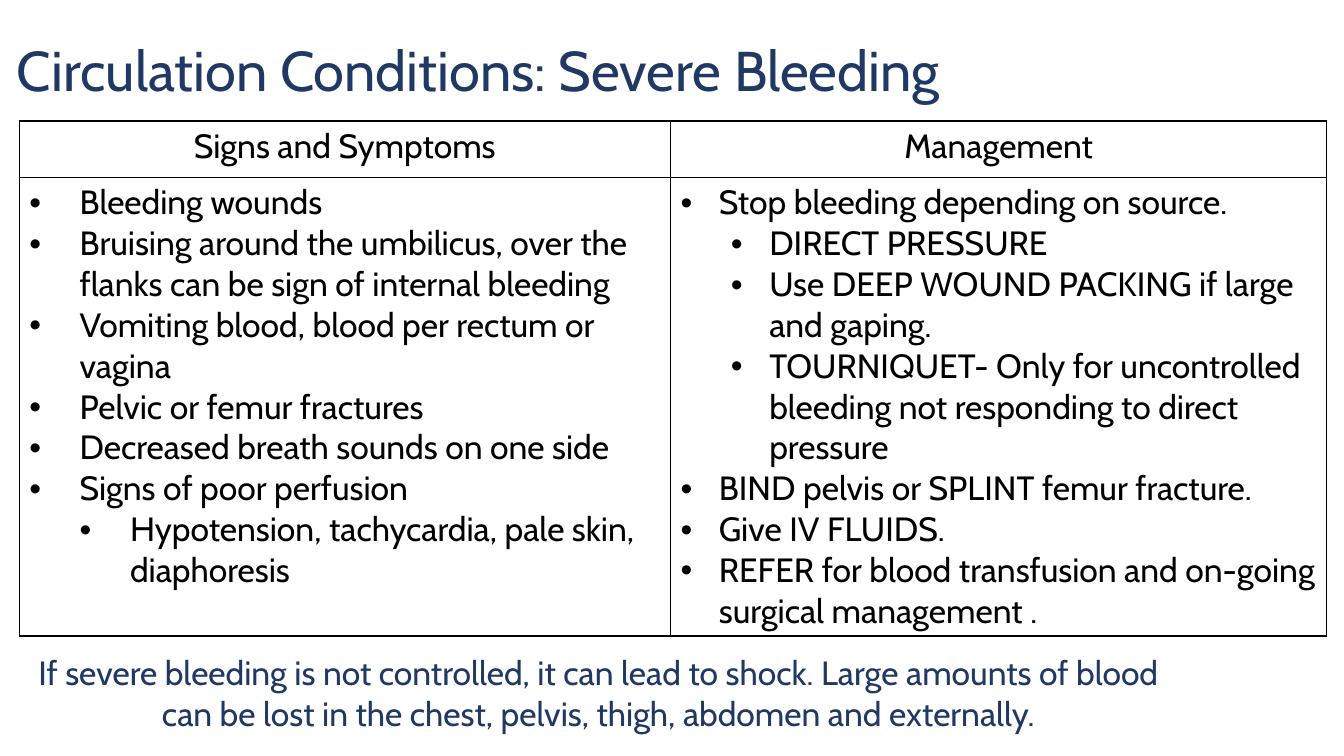
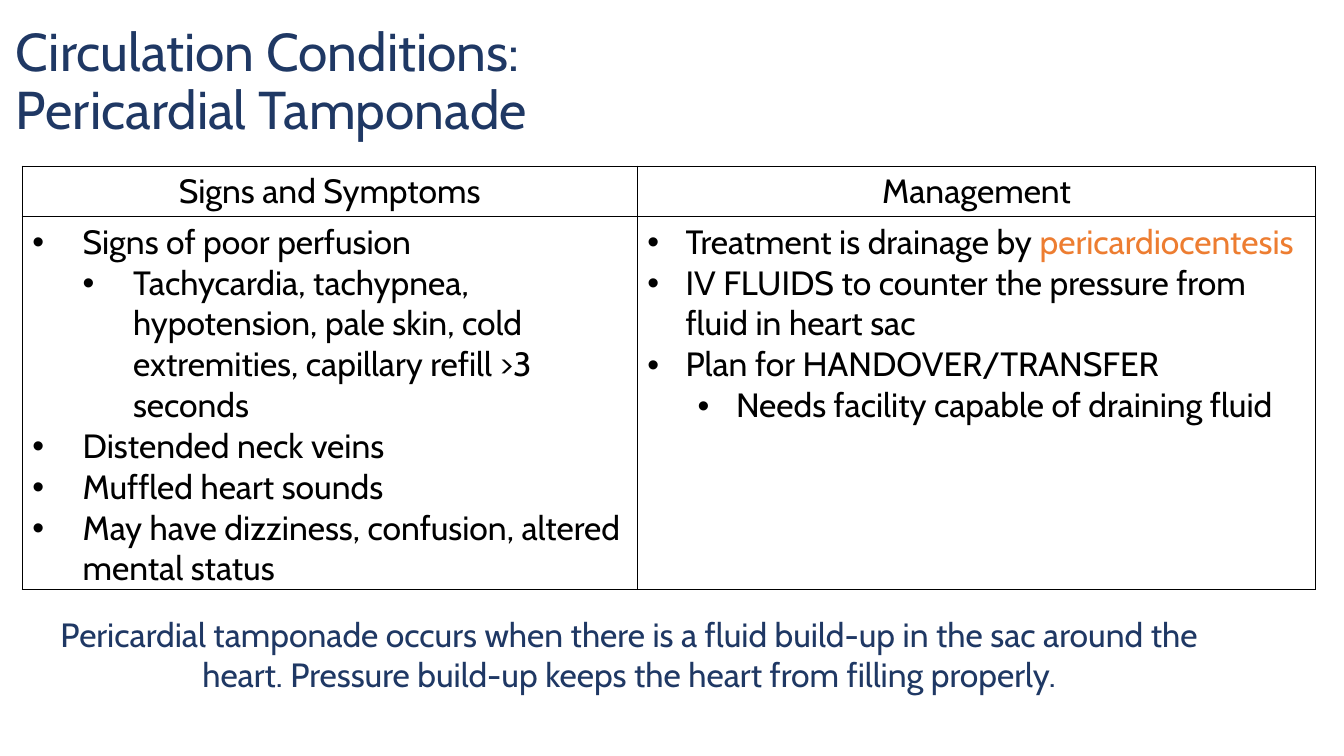
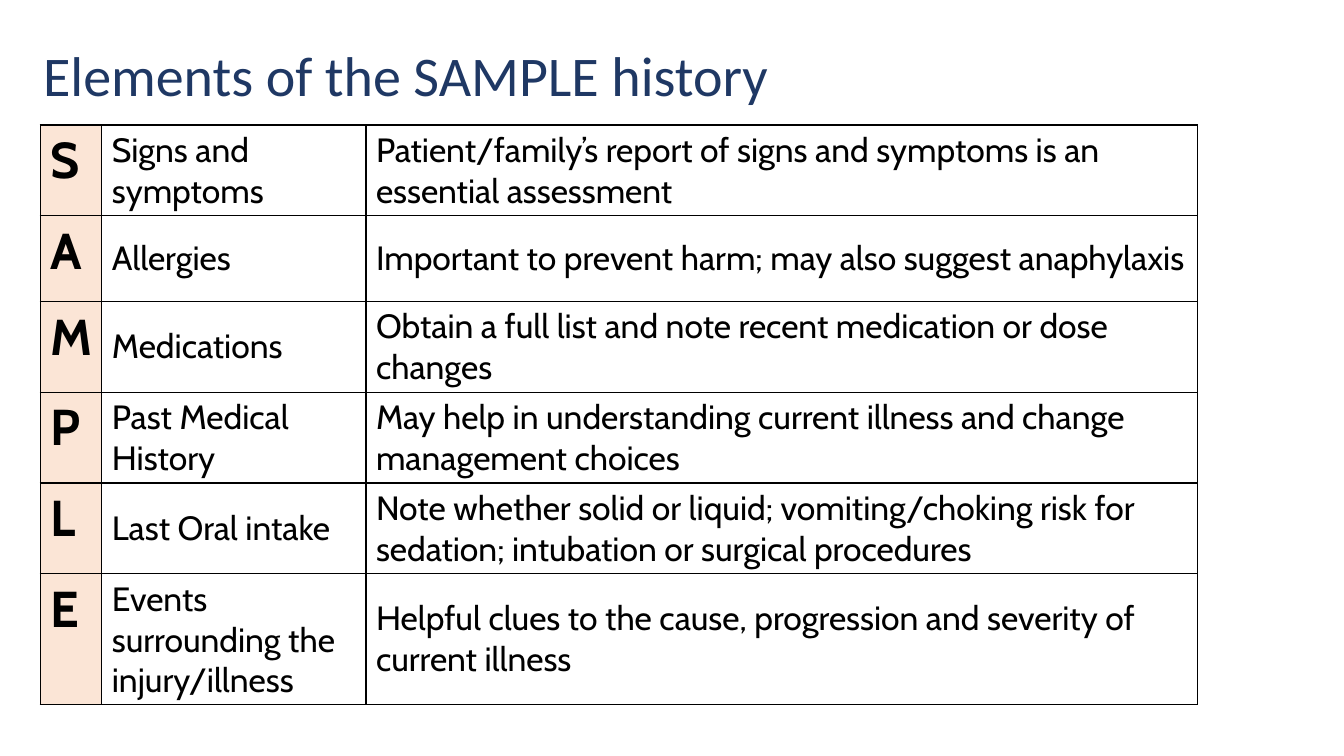
from lxml import etree
from pptx import Presentation
from pptx.dml.color import RGBColor
from pptx.enum.text import MSO_ANCHOR, PP_ALIGN
from pptx.oxml.ns import qn
from pptx.util import Inches, Pt

CENTER, LEFT = PP_ALIGN.CENTER, PP_ALIGN.LEFT
TOP, MIDDLE = MSO_ANCHOR.TOP, MSO_ANCHOR.MIDDLE
NAVY, BLACK, ORANGE, PEACH = "1F3864", "000000", "ED7D31", "FBE5D6"
FONT = "Cabin"
BODY_SIZE = 24
HEADINGS = ["Signs and Symptoms", "Management"]
HANGING = [0.5, 0.38]
SUB_INDENT = 0.5

BLEEDING = [
    [
        (0, "Bleeding wounds"),
        (0, "Bruising around the umbilicus, over the flanks can be sign of internal bleeding"),
        (0, "Vomiting blood, blood per rectum or vagina"),
        (0, "Pelvic or femur fractures"),
        (0, "Decreased breath sounds on one side"),
        (0, "Signs of poor perfusion"),
        (1, "Hypotension, tachycardia, pale skin, diaphoresis"),
    ],
    [
        (0, "Stop bleeding depending on source."),
        (1, "DIRECT PRESSURE"),
        (1, "Use DEEP WOUND PACKING if large and gaping."),
        (1, "TOURNIQUET- Only for uncontrolled bleeding not responding to direct pressure"),
        (0, "BIND pelvis or SPLINT femur fracture."),
        (0, "Give IV FLUIDS."),
        (0, "REFER for blood transfusion and on-going surgical management ."),
    ],
]
TAMPONADE = [
    [
        (0, "Signs of poor perfusion"),
        (1, "Tachycardia, tachypnea, hypotension, pale skin, cold extremities, "
            "capillary refill >3 seconds"),
        (0, "Distended neck veins"),
        (0, "Muffled heart sounds"),
        (0, "May have dizziness, confusion, altered mental status"),
    ],
    [
        (0, "Treatment is drainage by ", "pericardiocentesis"),
        (0, "IV FLUIDS to counter the pressure from fluid in heart sac"),
        (0, "Plan for HANDOVER/TRANSFER"),
        (1, "Needs facility capable of draining fluid"),
    ],
]
SAMPLE = [
    ("S", "Signs and symptoms",
     "Patient/family’s report of signs and symptoms is an essential assessment"),
    ("A", "Allergies", "Important to prevent harm; may also suggest anaphylaxis"),
    ("M", "Medications", "Obtain a full list and note recent medication or dose changes"),
    ("P", "Past Medical History",
     "May help in understanding current illness and change management choices"),
    ("L", "Last Oral intake",
     "Note whether solid or liquid; vomiting/choking risk for sedation; "
     "intubation or surgical procedures"),
    ("E", "Events surrounding the injury/illness",
     "Helpful clues to the cause, progression and severity of current illness"),
]


def color(value):
    """Turn a hex string into a colour."""
    return RGBColor.from_string(value)


def style(paragraph, size=BODY_SIZE, shade=BLACK, name=FONT, bold=False, align=LEFT):
    """Set the font and alignment of a whole paragraph."""
    paragraph.alignment = align
    font = paragraph.font
    font.name, font.size, font.bold = name, Pt(size), bold
    font.color.rgb = color(shade)


def add_text(page, left, top, width, height, text, anchor=TOP, spacing=None, **look):
    """Add a wrapping text box with one paragraph."""
    box = page.shapes.add_textbox(Inches(left), Inches(top), Inches(width), Inches(height))
    frame = box.text_frame
    frame.word_wrap = True
    frame.vertical_anchor = anchor
    paragraph = frame.paragraphs[0]
    paragraph.text = text
    paragraph.line_spacing = spacing
    style(paragraph, shade=NAVY, **look)


def add_title(page, left, top, text, width=10.28, size=40, name=FONT):
    """Add the slide title."""
    add_text(page, left, top, width, 1.45, text, MIDDLE, 0.9, size=size, name=name)


def add_note(page, left, top, width, text):
    """Add the centred remark below a table."""
    add_text(page, left, top, width, 0.91, text, align=CENTER)


def add_borders(cell):
    """Draw a thin black line on each side of a cell."""
    properties = cell._tc.get_or_add_tcPr()
    for side in ("lnL", "lnR", "lnT", "lnB"):
        line = etree.SubElement(properties, qn(f"a:{side}"), w=str(Pt(1)))
        fill = etree.SubElement(line, qn("a:solidFill"))
        etree.SubElement(fill, qn("a:srgbClr"), val=BLACK)


def add_grid(page, left, top, widths, heights):
    """Add a plain bordered table and return it."""
    frame = page.shapes.add_table(len(heights), len(widths), Inches(left), Inches(top),
                                  Inches(sum(widths)), Inches(sum(heights)))
    table = frame.table
    table.first_row = table.horz_banding = False
    for column, width in zip(table.columns, widths):
        column.width = Inches(width)
    for row, height in zip(table.rows, heights):
        row.height = Inches(height)
    for cell in table.iter_cells():
        add_borders(cell)
        cell.fill.background()
    return table


def fill_cell(cell, text, anchor=TOP, **look):
    """Write one paragraph into a cell."""
    cell.text = text
    cell.vertical_anchor = anchor
    style(cell.text_frame.paragraphs[0], **look)


def fill_bullets(cell, items, hanging):
    """Write a two-level bullet list into a cell."""
    frame = cell.text_frame
    for index, (level, text, *accents) in enumerate(items):
        paragraph = frame.add_paragraph() if index else frame.paragraphs[0]
        paragraph.level = level
        properties = paragraph._p.get_or_add_pPr()
        properties.set("marL", str(Inches(hanging + level * SUB_INDENT)))
        properties.set("indent", str(-Inches(hanging)))
        etree.SubElement(properties, qn("a:buFont"), typeface="Arial")
        etree.SubElement(properties, qn("a:buChar"), char="•")
        paragraph.add_run().text = text
        style(paragraph)
        for accent in accents:
            span = paragraph.add_run()
            span.text = accent
            span.font.color.rgb = color(ORANGE)


def add_condition_table(page, left, top, widths, heights, lists):
    """Add the table of signs and management for a condition."""
    table = add_grid(page, left, top, widths, heights)
    for column, (heading, items, hanging) in enumerate(zip(HEADINGS, lists, HANGING)):
        fill_cell(table.cell(0, column), heading, align=CENTER)
        fill_bullets(table.cell(1, column), items, hanging)


def add_sample_table(page):
    """Add the table that spells out the SAMPLE history."""
    table = add_grid(page, 0.4, 1.24, [0.61, 2.62, 8.25], [0.85] * len(SAMPLE))
    for row, (letter, element, reason) in enumerate(SAMPLE):
        initial = table.cell(row, 0)
        fill_cell(initial, letter, size=36, bold=True)
        initial.fill.solid()
        initial.fill.fore_color.rgb = color(PEACH)
        fill_cell(table.cell(row, 1), element, MIDDLE)
        fill_cell(table.cell(row, 2), reason, MIDDLE)


def main():
    """Build the three slides and save the deck."""
    deck = Presentation()
    deck.slide_width, deck.slide_height = Inches(13.33), Inches(7.5)
    bleeding, tamponade, history = [deck.slides.add_slide(deck.slide_layouts[6])
                                    for _ in range(3)]

    add_title(bleeding, 0.07, 0, "Circulation Conditions: Severe Bleeding")
    add_condition_table(bleeding, 0.19, 1.2, [6.46, 6.51], [0.56, 4.55], BLEEDING)
    add_note(bleeding, 0.13, 6.42, 11.61,
             "If severe bleeding is not controlled, it can lead to shock. Large amounts of "
             "blood can be lost in the chest, pelvis, thigh, abdomen and externally.")

    add_title(tamponade, 0.06, 0.1, "Circulation Conditions:\nPericardial Tamponade", size=38)
    add_condition_table(tamponade, 0.22, 1.65, [6.1, 6.73], [0.5, 3.7], TAMPONADE)
    add_note(tamponade, 0.18, 6.04, 12.12,
             "Pericardial tamponade occurs when there is a fluid build-up in the sac around "
             "the heart. Pressure build-up keeps the heart from filling properly.")

    add_title(history, 0.33, 0.05, "Elements of the SAMPLE history", 11.5, name="Calibri")
    add_sample_table(history)

    deck.save("out.pptx")


if __name__ == "__main__":
    main()
